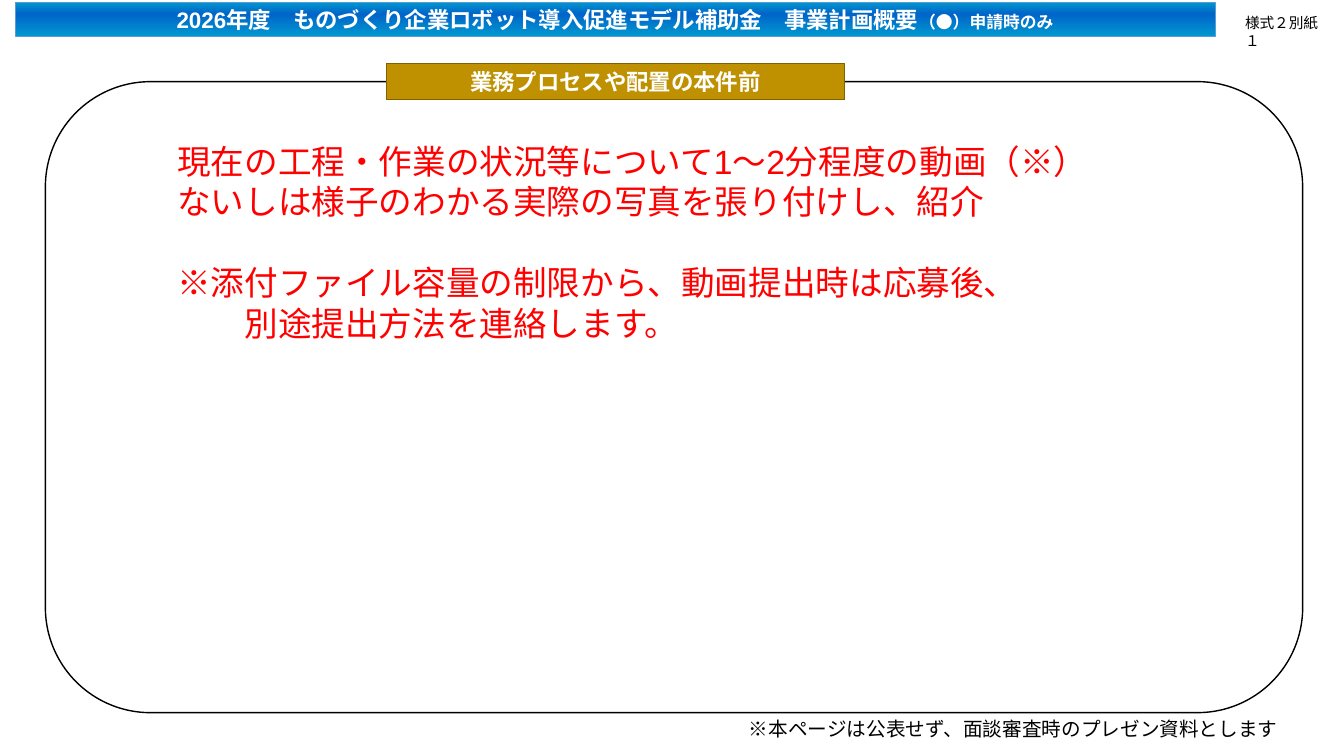
import pptx
import pptx.util
import pptx.dml.color
import pptx.enum.shapes
import pptx.enum.text
import pptx.oxml
import pptx.oxml.ns
from dataclasses import dataclass

TITLE = [[
    ("2026年度　ものづくり企業ロボット導入促進モデル補助金　事業計画概要", 16),
    ("（●）申請時のみ", 12),
]]
FORM_NUMBER = "様式２別紙１"
SECTION = "業務プロセスや配置の本件前"
GUIDANCE = [
    "現在の工程・作業の状況等について1～2分程度の動画（※）ないしは様子のわかる実際の写真を張り付けし、紹介",
    "※添付ファイル容量の制限から、動画提出時は応募後、",
    "別途提出方法を連絡します。",
]
FOOTNOTE = "※本ページは公表せず、面談審査時のプレゼン資料とします"

SLIDE_WIDTH, SLIDE_HEIGHT = pptx.util.Inches(13.33), pptx.util.Inches(7.5)
PERCENT_BOXES = {
    "title": (1.13, 0.27, 89.27, 4.53),
    "form": (91.9, 1.2, 7.5, 3.73),
    "guidance": (12.45, 18, 70.52, 33.6),
    "footnote": (54.99, 94.13, 45.01, 4.53),
    "frame": (3.38, 10.8, 93.55, 83.47),
    "section": (28.73, 8.4, 34.13, 4.8),
}


@dataclass(frozen=True)
class Theme:
    font: str = "Arial"
    white: str = "FFFFFF"
    black: str = "000000"
    red: str = "FF0000"
    gold: str = "BF9000"
    gold_line: str = "806000"
    blue_line: str = "5B9BD5"
    title_stops: tuple = ((0, "0098D0"), (35, "0064C8"), (100, "0098D0"))
    heading: float = 16
    body: float = 24
    note: float = 14
    form: float = 10.5


THEME = Theme()


def color(value):
    return pptx.dml.color.RGBColor.from_string(value)


def box(name):
    sides = (SLIDE_WIDTH, SLIDE_HEIGHT) * 2
    return [round(side * share / 100) for side, share in zip(sides, PERCENT_BOXES[name])]


def write(shape, paragraphs, size=16, ink="000000", bold=False, align="LEFT", anchor="TOP"):
    frame = shape.text_frame
    frame.word_wrap = True
    frame.auto_size = pptx.enum.text.MSO_AUTO_SIZE.NONE
    frame.vertical_anchor = pptx.enum.text.MSO_ANCHOR[anchor]
    for index, content in enumerate(paragraphs):
        paragraph = frame.add_paragraph() if index else frame.paragraphs[0]
        paragraph.alignment = pptx.enum.text.PP_ALIGN[align]
        for text, run_size in [(content, size)] if isinstance(content, str) else content:
            run = paragraph.add_run()
            run.text = text
            run.font.name = THEME.font
            run.font.size = pptx.util.Pt(run_size)
            run.font.bold = bold
            run.font.color.rgb = color(ink)
    return frame


def outline(shape, ink, width):
    shape.line.color.rgb = color(ink)
    shape.line.width = pptx.util.Pt(width)


def fill_gradient(shape, stops):
    shape.fill.gradient()
    shape.fill.gradient_angle = 270
    stop_list = shape.element.spPr.find(".//" + pptx.oxml.ns.qn("a:gsLst"))
    for stop in list(stop_list):
        stop_list.remove(stop)
    for position, ink in stops:
        stop_list.append(pptx.oxml.parse_xml(
            f'<a:gs {pptx.oxml.ns.nsdecls("a")} pos="{position * 1000}">'
            f'<a:srgbClr val="{ink}"/></a:gs>'))


def add_panel(slide, kind, name, line, width):
    shape = slide.shapes.add_shape(pptx.enum.shapes.MSO_SHAPE[kind], *box(name))
    shape.shadow.inherit = False
    shape.fill.background()
    outline(shape, line, width)
    return shape


def add_text(slide, name, paragraphs, **style):
    return write(slide.shapes.add_textbox(*box(name)), paragraphs, **style)


def main():
    presentation = pptx.Presentation()
    presentation.slide_width, presentation.slide_height = SLIDE_WIDTH, SLIDE_HEIGHT
    slide = presentation.slides.add_slide(presentation.slide_layouts[5])

    title = slide.shapes.title
    title.left, title.top, title.width, title.height = box("title")
    fill_gradient(title, THEME.title_stops)
    outline(title, THEME.blue_line, 0.5)
    heading = dict(size=THEME.heading, ink=THEME.white, bold=True, align="CENTER", anchor="MIDDLE")
    write(title, TITLE, **heading)

    add_text(slide, "form", [FORM_NUMBER], size=THEME.form, ink=THEME.black)
    guidance = add_text(slide, "guidance", GUIDANCE, size=THEME.body, ink=THEME.red)
    guidance.paragraphs[1].space_before = pptx.util.Pt(29)
    guidance.paragraphs[2]._p.get_or_add_pPr().set("marL", str(pptx.util.Pt(2 * THEME.body)))
    add_text(slide, "footnote", [FOOTNOTE], size=THEME.note, ink=THEME.black)

    add_panel(slide, "ROUNDED_RECTANGLE", "frame", THEME.black, 1)
    section = add_panel(slide, "RECTANGLE", "section", THEME.gold_line, 0.5)
    section.fill.solid()
    section.fill.fore_color.rgb = color(THEME.gold)
    write(section, [SECTION], **heading)

    presentation.save("out.pptx")


if __name__ == "__main__":
    main()
